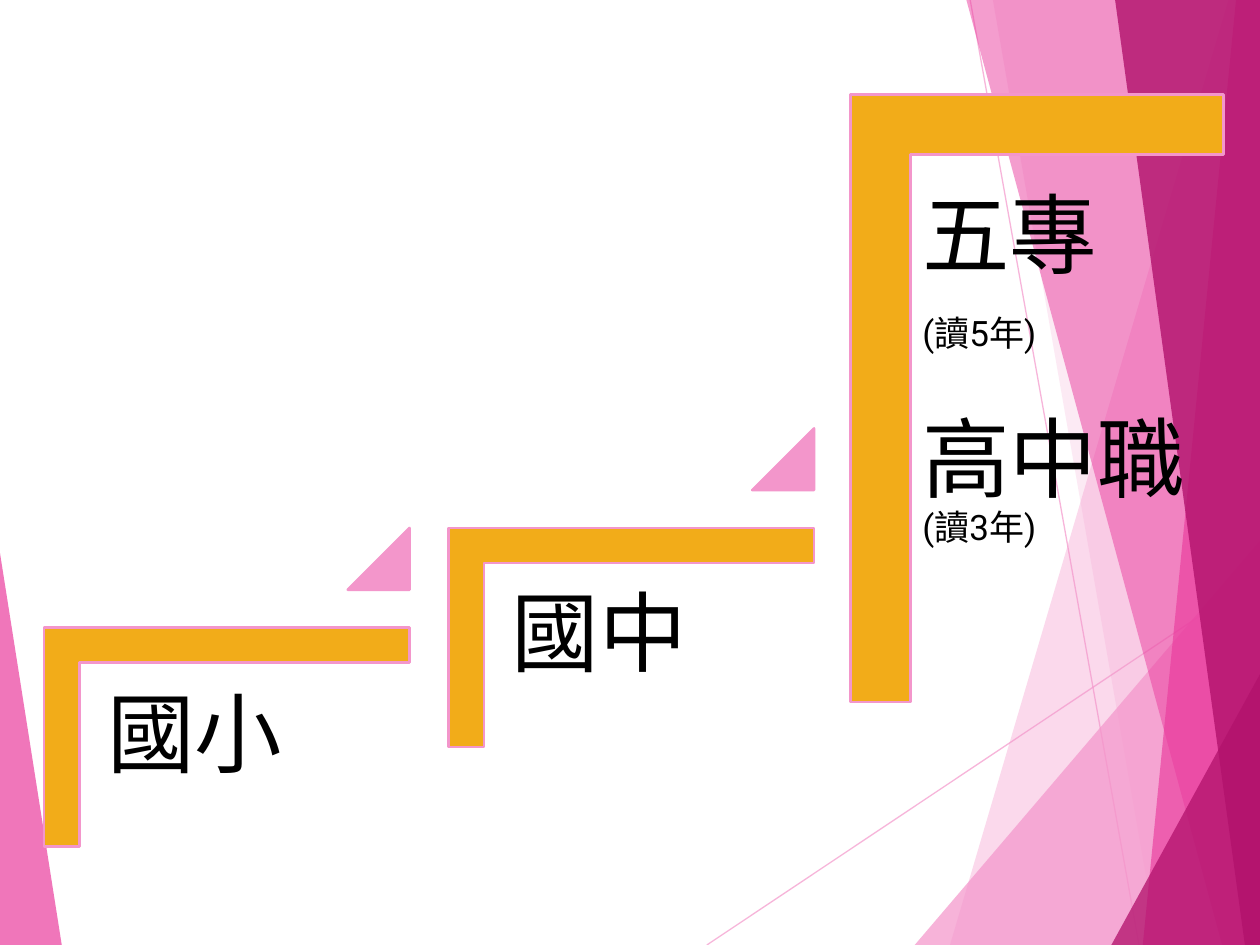
from pptx import Presentation, util as u
from pptx.dml.color import RGBColor
from pptx.enum import shapes, text
from pptx.oxml.ns import qn
from lxml import etree

WIDTH, HEIGHT = 10, 7.5
PINK, ROSE, PLUM = "F496CB", "EA3C9E", "B2126C"
GOLD, EDGE, BLACK = "F2AC19", "F396CB", "000000"
FONT = "Roboto"

# Backdrop: lines as (start, end), facets as (colour, opacity %, corners)
RAYS = [((5.61, HEIGHT), (WIDTH, 4.57)), ((7.7, 0), (9.04, HEIGHT))]
FACETS = [
    (PINK, 36, [(9.75, 0), (7.54, HEIGHT), (WIDTH, HEIGHT), (WIDTH, 0)]),
    (PINK, 20, [(7.88, 0), (9.19, HEIGHT), (WIDTH, HEIGHT), (WIDTH, 0)]),
    (PINK, 72, [(7.26, HEIGHT), (WIDTH, 4.29), (WIDTH, HEIGHT)]),
    (ROSE, 50, [(7.67, 0), (9.7, HEIGHT), (WIDTH, HEIGHT), (WIDTH, 0)]),
    (ROSE, 66, [(9.81, 0), (9.07, HEIGHT), (WIDTH, HEIGHT), (WIDTH, 0)]),
    (PLUM, 80, [(8.85, 0), (9.88, HEIGHT), (WIDTH, HEIGHT), (WIDTH, 0)]),
    (PLUM, 76, [(8.82, HEIGHT), (WIDTH, 5.35), (WIDTH, HEIGHT)]),
    (ROSE, 70, [(0, 4.39), (0.49, HEIGHT), (0, HEIGHT)]),
]

# Steps: bracket box (left, top, width, height), text offset (x, y),
# paragraphs as (space before, [(words, size)])
STEPS = [
    ((0.35, 4.98, 2.9, 1.74), (0.29, 0.29), [(0, [("國小", 50)])]),
    ((3.56, 4.19, 2.9, 1.74), (0.29, 0.28), [(0, [("國中", 50)])]),
    ((6.75, 0.75, 2.96, 4.82), (0.36, 0.56), [
        (0, [("五專", 50)]),
        (17.5, [("(讀5年)", 20)]),
        (35, [("高中職", 50), ("(讀3年)", 20)]),
    ]),
]
TRIANGLE, RISE = 0.49, 0.79
BOX_WIDTH, BOX_HEIGHT, INSET = 2.62, 2.3, 0.21


def colour(value):
    return RGBColor.from_string(value)


def set_opacity(paint, percent):
    alpha = etree.SubElement(paint.find(".//" + qn("a:srgbClr")), qn("a:alpha"))
    alpha.set("val", str(percent * 1000))


def paint_shape(shape, fill, line=None):
    shape.shadow.inherit = False
    shape.fill.solid()
    shape.fill.fore_color.rgb = colour(fill)
    if line:
        shape.line.color.rgb = colour(line)
        shape.line.width = u.Pt(1.5)
    else:
        shape.line.fill.background()


def add_ray(page, start, end):
    ray = page.shapes.add_connector(shapes.MSO_CONNECTOR.STRAIGHT,
                                    *[u.Inches(n) for n in start + end])
    ray.line.color.rgb = colour(PINK)
    ray.line.width = u.Pt(0.75)
    properties = ray._element.spPr
    set_opacity(properties.find(qn("a:ln")), 70)
    etree.SubElement(properties, qn("a:effectLst"))


def add_facet(page, fill, opacity, corners):
    points = [(round(x * 100), round(y * 100)) for x, y in corners]
    builder = page.shapes.build_freeform(*points[0], scale=u.Inches(0.01))
    builder.add_line_segments(points[1:], close=True)
    facet = builder.convert_to_shape()
    paint_shape(facet, fill)
    set_opacity(facet._element.spPr.find(qn("a:solidFill")), opacity)


def add_preset(page, kind, left, top, width, height, fill, adjust):
    shape = page.shapes.add_shape(
        kind, *[u.Inches(n) for n in (left, top, width, height)])
    for index, value in enumerate(adjust):
        shape.adjustments[index] = value
    paint_shape(shape, fill, EDGE)
    return shape


def add_bracket(page, left, top, width, height):
    # A quarter turn swaps the sides around the same centre
    shift = (width - height) / 2
    bracket = add_preset(page, shapes.MSO_SHAPE.CORNER, left + shift,
                         top - shift, height, width, GOLD, (0.161, 0.161))
    bracket.rotation = 90


def add_text(page, left, top, paragraphs, *, font=FONT, ink=BLACK, spacing=0.9):
    box = page.shapes.add_textbox(
        *[u.Inches(n) for n in (left, top, BOX_WIDTH, BOX_HEIGHT)])
    frame = box.text_frame
    frame.word_wrap = True
    frame.vertical_anchor = text.MSO_ANCHOR.TOP
    frame.margin_left = frame.margin_right = u.Inches(INSET)
    frame.margin_top = frame.margin_bottom = u.Inches(INSET)
    for index, (before, spans) in enumerate(paragraphs):
        para = frame.add_paragraph() if index else frame.paragraphs[0]
        para.line_spacing = spacing
        para.space_before = u.Pt(before)
        for words, size in spans:
            span = para.add_run()
            span.text = words
            span.font.name = font
            span.font.size = u.Pt(size)
            span.font.color.rgb = colour(ink)


def main():
    deck = Presentation()
    deck.slide_width, deck.slide_height = u.Inches(WIDTH), u.Inches(HEIGHT)
    page = deck.slides.add_slide(deck.slide_layouts[6])

    # Backdrop
    for start, end in RAYS:
        add_ray(page, start, end)
    for facet in FACETS:
        add_facet(page, *facet)

    # Rising steps, with a triangle above all but the last
    for index, (bracket, offset, paragraphs) in enumerate(STEPS):
        left, top, width, height = bracket
        add_bracket(page, *bracket)
        add_text(page, left + offset[0], top + offset[1], paragraphs)
        if index < len(STEPS) - 1:
            add_preset(page, shapes.MSO_SHAPE.ISOSCELES_TRIANGLE,
                       left + width - TRIANGLE, top - RISE,
                       TRIANGLE, TRIANGLE, EDGE, (1,))

    deck.save("out.pptx")


if __name__ == "__main__":
    main()
